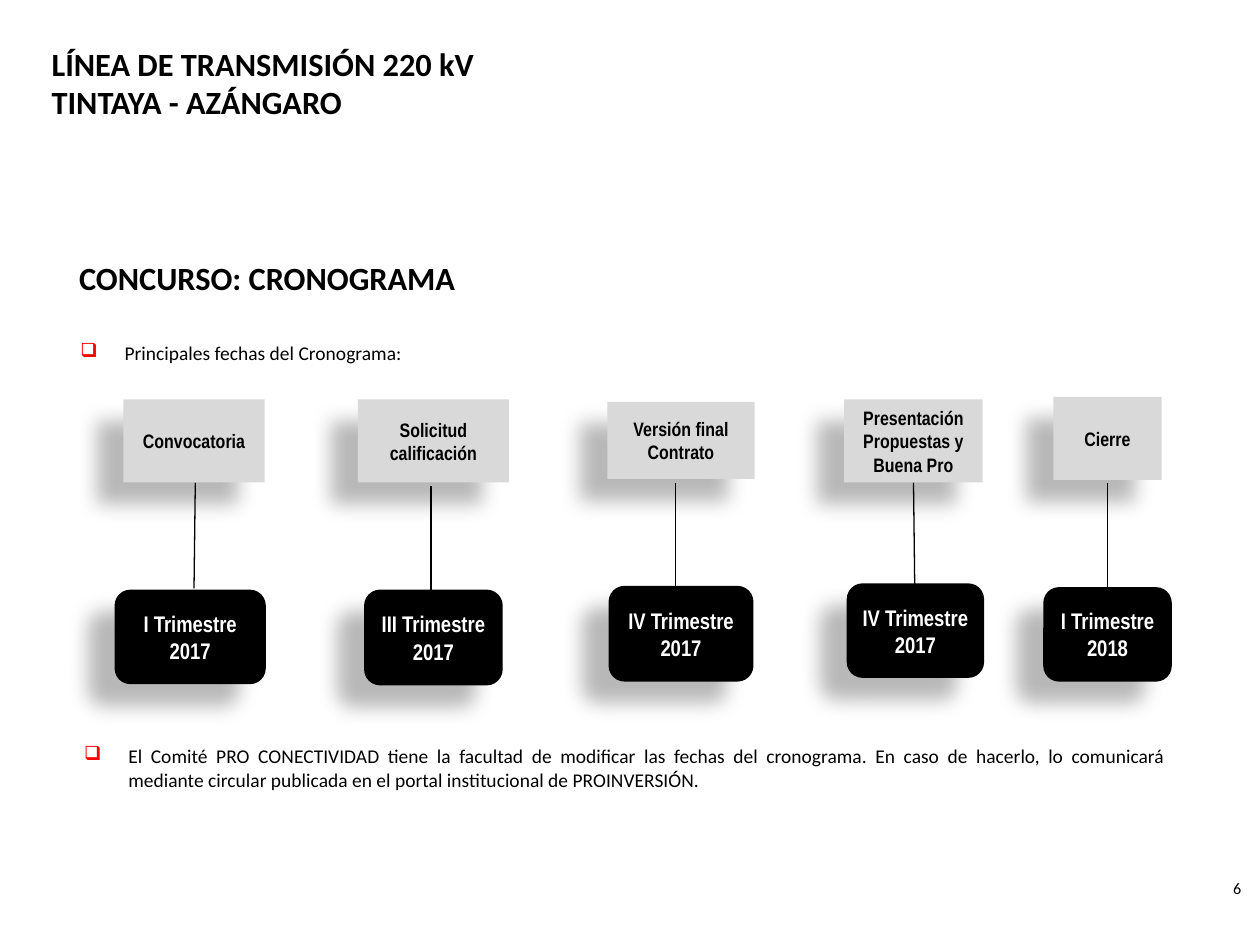
from lxml.etree import SubElement
from pptx import Presentation
from pptx.dml.color import RGBColor as Rgb
from pptx.enum.shapes import MSO_CONNECTOR as Link, MSO_SHAPE as Form
from pptx.enum.text import MSO_ANCHOR as Anchor, MSO_AUTO_SIZE as Fit, PP_ALIGN as Align
from pptx.oxml.ns import qn
from pptx.util import Inches, Pt

COLOURS = {"ink": "000000", "paper": "FFFFFF", "stage": "D9D9D9", "bullet": "FF0000"}
STAGES = [
    ("Convocatoria", (9.8, 31.7, 11.2, 6.6),
     ("I Trimestre", "2017"), (9.1, 46.8, 12, 7.5), (15.5, 38.3, 15.4, 46.7)),
    ("Solicitud calificación", (28.4, 31.7, 12, 6.6),
     ("III Trimestre", "2017"), (28.9, 46.8, 11, 7.6), (34.2, 38.6, 34.2, 46.9)),
    ("Versión final Contrato", (48.2, 31.9, 11.7, 6.1),
     ("IV Trimestre", "2017"), (48.3, 46.5, 11.5, 7.6), (53.6, 38.3, 53.6, 46.5)),
    ("Presentación Propuestas y Buena Pro", (67, 31.7, 11, 6.6),
     ("IV Trimestre", "2017"), (67.2, 46.3, 10.9, 7.5), (72.5, 38.3, 72.6, 46.5)),
    ("Cierre", (83.6, 31.5, 8.6, 6.6),
     ("I Trimestre", "2018"), (82.8, 46.6, 10.2, 7.5), (87.9, 38.3, 87.9, 46.8)),
]


class Sketch:
    """Draws styled elements on one slide, measured on a grid of 100 columns by 75 rows."""

    body_font, box_font = "Calibri", "Arial Narrow"

    def __init__(self, deck):
        self.cell_width = deck.slide_width / 100
        self.cell_height = deck.slide_height / 75
        self.page = deck.slides.add_slide(deck.slide_layouts[5])

    def grid(self, *cells):
        sizes = (self.cell_width, self.cell_height)
        return [round(cell * sizes[index % 2]) for index, cell in enumerate(cells)]

    def fill_text(self, box, lines, size, font=body_font, colour="ink", bold=False,
                  align=Align.LEFT, anchor=Anchor.TOP, wrap=True):
        frame = box.text_frame
        frame.text = "\n".join(lines)
        frame.word_wrap = wrap
        frame.auto_size = Fit.NONE
        frame.vertical_anchor = anchor
        for para in frame.paragraphs:
            para.alignment = align
            for span in para.runs:
                span.font.size = Pt(size)
                span.font.name = font
                span.font.bold = bold
                span.font.color.rgb = Rgb.from_string(COLOURS[colour])

    def title(self, lines, area):
        box = self.page.shapes.title
        box.left, box.top, box.width, box.height = self.grid(*area)
        self.fill_text(box, lines, 18.5, bold=True, anchor=Anchor.MIDDLE)
        box.text_frame.margin_left = Inches(0.2)

    def text(self, words, area, size, **style):
        box = self.page.shapes.add_textbox(*self.grid(*area))
        self.fill_text(box, [words], size, **style)
        return box

    def bullet(self, words, area):
        box = self.text(words, area, 11.1, align=Align.JUSTIFY)
        props = box.text_frame.paragraphs[0]._p.get_or_add_pPr()
        props.set("marL", str(Inches(0.35)))
        props.set("indent", str(-Inches(0.35)))
        colour = SubElement(props, qn("a:buClr"))
        SubElement(colour, qn("a:srgbClr"), val=COLOURS["bullet"])
        SubElement(props, qn("a:buChar"), char="❑")

    def card(self, form, lines, area, fill, **style):
        box = self.page.shapes.add_shape(form, *self.grid(*area))
        box.fill.solid()
        box.fill.fore_color.rgb = Rgb.from_string(COLOURS[fill])
        box.line.fill.background()
        self.shade(box)
        self.fill_text(box, lines, font=self.box_font, bold=True, align=Align.CENTER,
                       anchor=Anchor.MIDDLE, **style)

    def shade(self, box):
        box.shadow.inherit = False
        effects = box._element.spPr.find(qn("a:effectLst"))
        shadow = SubElement(effects, qn("a:outerShdw"), blurRad=str(Pt(11.8)),
                            dist=str(Pt(19.7)), dir=str(141 * 60000),
                            algn="ctr", rotWithShape="0")
        colour = SubElement(shadow, qn("a:srgbClr"), val=COLOURS["ink"])
        SubElement(colour, qn("a:alpha"), val="28000")

    def link(self, ends):
        line = self.page.shapes.add_connector(Link.STRAIGHT, *self.grid(*ends))
        line.line.color.rgb = Rgb.from_string(COLOURS["ink"])
        line.line.width = Pt(0.75)
        SubElement(line._element.spPr, qn("a:effectLst"))


def main():
    deck = Presentation()
    deck.slide_width, deck.slide_height = Inches(10), Inches(7.5)
    sketch = Sketch(deck)
    sketch.title(["LÍNEA DE TRANSMISIÓN 220 kV", "TINTAYA - AZÁNGARO"], (2.1, 2.2, 65.6, 8.7))
    sketch.text("CONCURSO: CRONOGRAMA", (5.3, 19.3, 37, 5.4), 18.5,
                bold=True, anchor=Anchor.MIDDLE)
    sketch.bullet("Principales fechas del Cronograma:", (5.4, 26.6, 30.3, 2.9))
    for stage, stage_area, date, date_area, ends in STAGES:
        sketch.link(ends)
        sketch.card(Form.RECTANGLE, [stage], stage_area, "stage", size=11.1)
        sketch.card(Form.ROUNDED_RECTANGLE, date, date_area, "ink",
                    size=12.9, colour="paper", wrap=False)
    sketch.bullet("El Comité PRO CONECTIVIDAD tiene la facultad de modificar las fechas del "
                  "cronograma. En caso de hacerlo, lo comunicará mediante circular publicada "
                  "en el portal institucional de PROINVERSIÓN.", (5.7, 58.6, 87.7, 4.7))
    sketch.text("6", (94.5, 69.2, 5, 3), 9.2, align=Align.RIGHT)
    deck.save("out.pptx")


if __name__ == "__main__":
    main()
